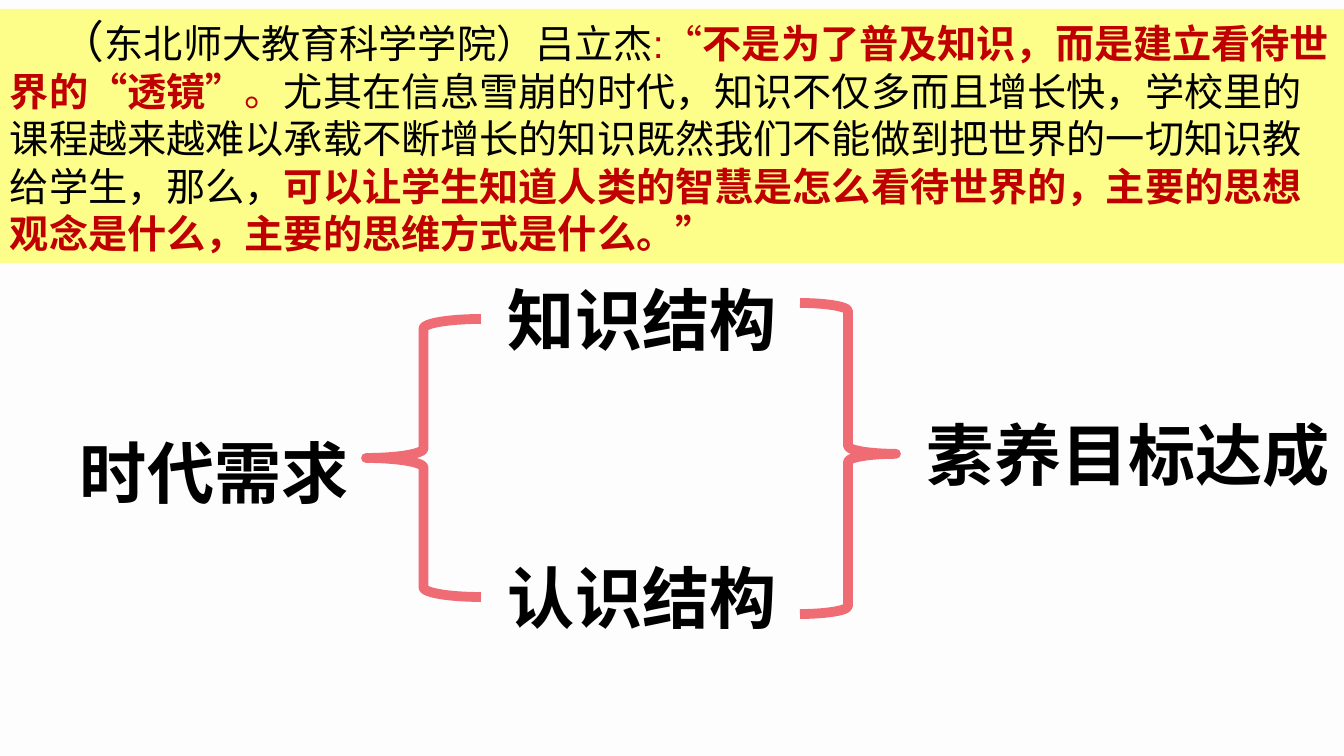
from dataclasses import dataclass

from lxml import etree
from pptx import Presentation
from pptx import util as u
from pptx.dml.color import RGBColor
from pptx.enum import shapes, text
from pptx.oxml.ns import qn


@dataclass(frozen=True)
class Theme:
    """Colours, font and type sizes of the slide."""
    font: str = "Arial"
    page: str = "FDFDFD"
    ink: str = "000000"
    accent: str = "C00000"
    band: str = "FFFF00"
    band_opacity: int = 45
    brace: str = "EF6C74"
    brace_width: int = 7
    opening: int = 32
    quote: int = 28
    label: int = 48


THEME = Theme()
LABEL_HEIGHT = 92

QUOTE = [
    ("（", THEME.ink, False),
    ("东北师大教育科学学院）吕立杰", THEME.ink, False),
    (":“", THEME.accent, False),
    ("不是为了普及知识，而是建立看待世界的“透镜”", THEME.accent, True),
    ("。", THEME.accent, False),
    ("尤其在信息雪崩的时代，知识不仅多而且增长快，学校里的课程越来越难以承载"
     "不断增长的知识既然我们不能做到把世界的一切知识教给学生，那么，", THEME.ink, False),
    ("可以让学生知道人类的智慧是怎么看待世界的，主要的思想观念是什么，"
     "主要的思维方式是什么。”", THEME.accent, True),
]

LABELS = [
    ("时代需求", 70, 426, 434),
    ("知识结构", 498, 273, 302),
    ("认识结构", 498, 551, 365),
    ("素养目标达成", 917, 408, 427),
]

BRACES = [
    (shapes.MSO_SHAPE.LEFT_BRACE, (366, 319, 115, 278), 0.5),
    (shapes.MSO_SHAPE.RIGHT_BRACE, (800, 303, 96, 311), 0.485),
]


def px(length):
    """Turn pixels into EMU."""
    return u.Emu(round(length * 914400 / 100.8))


def color(value):
    """Turn a hex string into a colour."""
    return RGBColor.from_string(value)


def set_up_frame(frame):
    """Wrap the text and anchor it at the top."""
    frame.word_wrap = True
    frame.vertical_anchor = text.MSO_ANCHOR.TOP


def add_quote(page):
    """Add the translucent band with the quotation."""
    box = page.shapes.add_shape(
        shapes.MSO_SHAPE.RECTANGLE, px(0), px(9), px(1344), px(254))
    box.shadow.inherit = False
    box.line.fill.background()
    box.fill.solid()
    box.fill.fore_color.rgb = color(THEME.band)
    tint = box.fill._xPr.find(qn("a:solidFill"))[0]
    etree.SubElement(tint, qn("a:alpha"), val=str(THEME.band_opacity * 1000))

    set_up_frame(box.text_frame)
    para = box.text_frame.paragraphs[0]
    para.alignment = text.PP_ALIGN.LEFT
    para.font.name = THEME.font
    para._p.get_or_add_pPr().set("indent", str(px(50)))
    for wording, ink, bold in QUOTE:
        span = para.add_run()
        span.text = wording
        span.font.size = u.Pt(THEME.quote)
        span.font.bold = bold
        span.font.color.rgb = color(ink)
    para.runs[0].font.size = u.Pt(THEME.opening)


def add_label(page, wording, left, top, width):
    """Add one large bold label."""
    box = page.shapes.add_textbox(px(left), px(top), px(width), px(LABEL_HEIGHT))
    set_up_frame(box.text_frame)
    para = box.text_frame.paragraphs[0]
    para.text = wording
    para.font.name = THEME.font
    para.font.size = u.Pt(THEME.label)
    para.font.bold = True
    para.font.color.rgb = color(THEME.ink)


def add_brace(page, kind, area, tip):
    """Add one outlined brace whose point sits at the given share of its height."""
    brace = page.shapes.add_shape(kind, *map(px, area))
    brace.shadow.inherit = False
    brace.fill.background()
    brace.line.color.rgb = color(THEME.brace)
    brace.line.width = u.Pt(THEME.brace_width)
    brace.adjustments[0] = 0.083
    brace.adjustments[1] = tip


def main():
    """Build and save the slide."""
    deck = Presentation()
    deck.slide_width, deck.slide_height = px(1344), px(756)
    page = deck.slides.add_slide(deck.slide_layouts.get_by_name("Blank"))
    page.background.fill.solid()
    page.background.fill.fore_color.rgb = color(THEME.page)
    add_quote(page)
    for label in LABELS:
        add_label(page, *label)
    for brace in BRACES:
        add_brace(page, *brace)
    deck.save("out.pptx")


if __name__ == "__main__":
    main()
